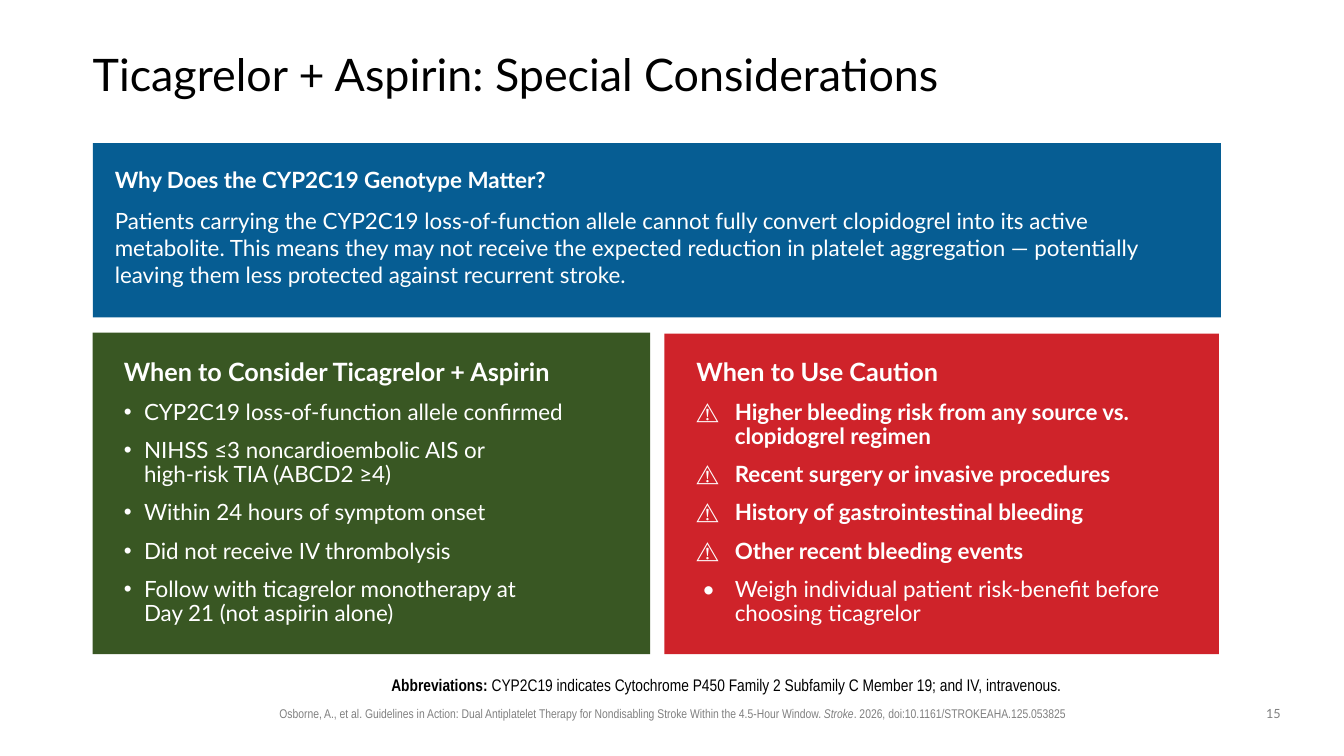
from lxml.etree import SubElement
from pptx import Presentation
from pptx.dml.color import RGBColor
from pptx.enum.shapes import MSO_SHAPE
from pptx.enum.text import MSO_ANCHOR, PP_ALIGN
from pptx.oxml.ns import qn
from pptx.util import Inches, Pt

HUES = {"blue": "065D93", "green": "395723", "red": "CF232A",
        "white": "FFFFFF", "black": "000000", "gray": "808080"}
LEFT = 0.92
USES = ["CYP2C19 loss-of-function allele confirmed",
        "NIHSS ≤3 noncardioembolic AIS or\nhigh-risk TIA (ABCD2 ≥4)",
        "Within 24 hours of symptom onset",
        "Did not receive IV thrombolysis",
        "Follow with ticagrelor monotherapy at\nDay 21 (not aspirin alone)"]
RISKS = ["Higher bleeding risk from any source vs. clopidogrel regimen",
         "Recent surgery or invasive procedures",
         "History of gastrointestinal bleeding",
         "Other recent bleeding events"]


def add_text(slide, box, inset=(0.1, 0.05, 0.1, 0.05), anchor=MSO_ANCHOR.TOP):
    frame = slide.shapes.add_textbox(*map(Inches, box)).text_frame
    frame.word_wrap = True
    frame.vertical_anchor = anchor
    (frame.margin_left, frame.margin_top,
     frame.margin_right, frame.margin_bottom) = map(Inches, inset)
    return frame


def add_para(frame, text, size, hue="white", face="Lato", bold=False,
             align=PP_ALIGN.LEFT, space=0.9, indent=None, bullet=None):
    first = not frame.paragraphs[0].runs
    para = frame.paragraphs[0] if first else frame.add_paragraph()
    para.text = text
    para.alignment = align
    para.line_spacing = space
    if not first:
        para.space_before = Pt(10)
    props = para._p.get_or_add_pPr()
    if indent:
        props.set("marL", str(Inches(indent)))
        props.set("indent", str(-Inches(indent)))
    if bullet:
        SubElement(props, qn("a:buFont"), typeface="Arial")
        SubElement(props, qn("a:buChar"), char=bullet)
    font = para.font
    font.name, font.size, font.bold = face, Pt(size), bold
    font.color.rgb = RGBColor.from_string(HUES[hue])
    return para


def add_panel(slide, box, hue, inset):
    panel = slide.shapes.add_shape(MSO_SHAPE.RECTANGLE, *map(Inches, box))
    panel.shadow.inherit = False
    panel.fill.solid()
    panel.fill.fore_color.rgb = RGBColor.from_string(HUES[hue])
    panel.line.fill.background()
    left, top, width, height = box
    dx, dy = inset
    return add_text(slide, (left + dx, top + dy, width - 2 * dx, height - 2 * dy))


def add_title(slide, box):
    frame = add_text(slide, box, (0, 0, 0, 0), MSO_ANCHOR.MIDDLE)
    add_para(frame, "Ticagrelor + Aspirin: Special Considerations", 32, "black")


def add_reason(slide, box):
    frame = add_panel(slide, box, "blue", (0.12, 0.21))
    add_para(frame, "Why Does the CYP2C19 Genotype Matter?", 16, bold=True)
    add_para(frame, "Patients carrying the CYP2C19 loss-of-function allele cannot "
             "fully convert clopidogrel into its active metabolite. This means they "
             "may not receive the expected reduction in platelet aggregation — "
             "potentially leaving them less protected against recurrent stroke.",
             16, space=1)


def add_uses(slide, box):
    frame = add_panel(slide, box, "green", (0.21, 0.22))
    add_para(frame, "When to Consider Ticagrelor + Aspirin", 18, bold=True)
    for use in USES:
        add_para(frame, use, 16, indent=0.2, bullet="•")


def add_risks(slide, box):
    frame = add_panel(slide, box, "red", (0.22, 0.21))
    add_para(frame, "When to Use Caution", 18, bold=True)
    for risk in RISKS:
        add_para(frame, "⚠\t" + risk, 16, bold=True, indent=0.38)
    add_para(frame, " •\tWeigh individual patient risk-benefit before "
             "choosing ticagrelor", 16, indent=0.38)


def add_terms(slide, box):
    frame = add_text(slide, box, (0, 0.05, 0.1, 0.05), MSO_ANCHOR.BOTTOM)
    para = add_para(frame, "Abbreviations: ", 12, "black", "Arial Narrow",
                    align=PP_ALIGN.CENTER)
    para.runs[0].font.bold = True
    para.add_run().text = ("CYP2C19 indicates Cytochrome P450 Family 2 Subfamily C "
                           "Member 19; and IV, intravenous.")


def add_foot(slide, box, page):
    para = add_para(add_text(slide, box),
                    "Osborne, A., et al. Guidelines in Action: Dual Antiplatelet "
                    "Therapy for Nondisabling Stroke Within the 4.5-Hour Window. ",
                    9, "gray", "Arial Narrow", align=PP_ALIGN.CENTER, space=1)
    name = para.add_run()
    name.text = "Stroke"
    name.font.italic = True
    para.add_run().text = ". 2026, doi:10.1161/STROKEAHA.125.053825"
    add_para(add_text(slide, page), "15", 9, "gray",
             align=PP_ALIGN.CENTER, space=1)


def main():
    deck = Presentation()
    deck.slide_width, deck.slide_height = Inches(13.33), Inches(7.5)
    slide = deck.slides.add_slide(deck.slide_layouts[6])
    add_title(slide, (LEFT, 0.4, 11.5, 0.72))
    add_reason(slide, (LEFT, 1.42, 11.19, 1.73))
    add_uses(slide, (LEFT, 3.3, 5.53, 3.19))
    add_risks(slide, (6.59, 3.31, 5.5, 3.18))
    add_terms(slide, (1.51, 6.59, 11.49, 0.36))
    add_foot(slide, (2.36, 6.95, 8.62, 0.25), (12.42, 6.95, 0.42, 0.26))
    deck.save("out.pptx")


if __name__ == "__main__":
    main()
